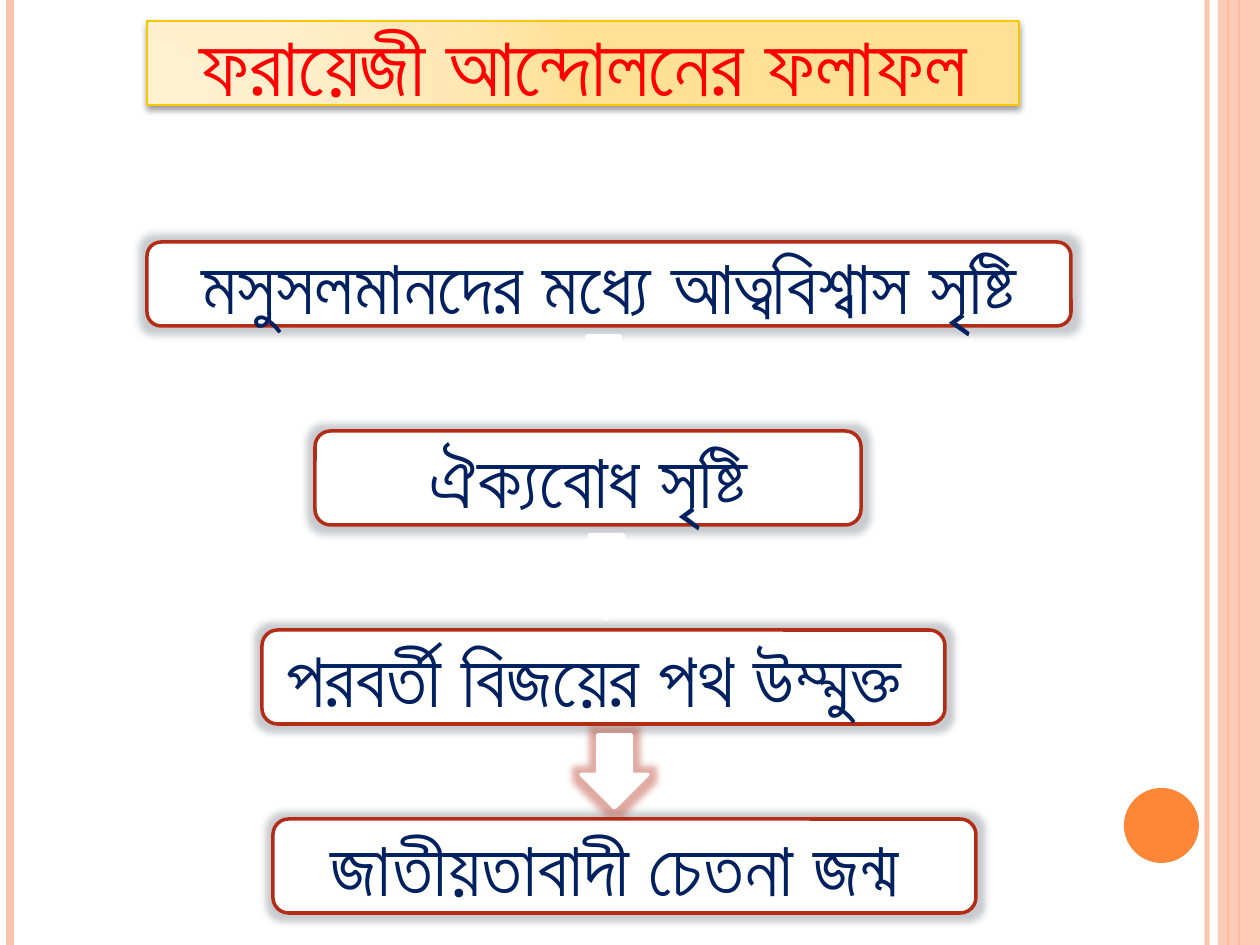
from dataclasses import dataclass

from lxml.etree import SubElement
from pptx import Presentation
from pptx.dml.color import RGBColor
from pptx.enum.shapes import MSO_CONNECTOR, MSO_SHAPE
from pptx.enum.text import MSO_ANCHOR, MSO_AUTO_SIZE, PP_ALIGN
from pptx.oxml.ns import qn
from pptx.util import Emu, Pt

SCALE = 914400 / 126  # EMU in one px


@dataclass(frozen=True)
class Theme:
    font: str = "Lato"
    head: int = 48
    body: int = 44
    white: str = "FFFFFF"
    navy: str = "002060"
    red: str = "FF0000"
    rust: str = "B32C16"
    gray: str = "777C84"
    gold: str = "F8C700"
    peach: str = "FEC3AE"
    orange: str = "FE8637"
    black: str = "000000"
    stops: tuple = ((0, "FFF0D1"), (30, "FFEFCC"), (75, "FFE7B1"), (100, "FFE193"))


T = Theme()

# Content: text and box (left, top, width, height)
TITLE = ("ফরায়েজী আন্দোলনের ফলাফল", (147, 21, 872, 84))
STEPS = [
    ("মসুসলমানদের মধ্যে আত্ববিশ্বাস সৃষ্টি", (147, 242, 924, 84)),
    ("ঐক্যবোধ সৃষ্টি", (315, 431, 546, 94)),
    ("পরবর্তী বিজয়ের পথ উম্মুক্ত ", (262, 630, 683, 94)),
    ("জাতীয়তাবাদী চেতনা জন্ম ", (273, 819, 703, 94)),
]
ARROWS = [(570, 126, 60, 93), (570, 336, 67, 73), (573, 535, 67, 84), (581, 735, 67, 73)]
# Stripes: x, colour, width in points, opacity
STRIPES = [(1207, T.peach, 3, 93), (10, T.peach, 4.5, 100),
           (1239, T.orange, 1.5, 100), (1228, T.orange, 0.75, 100)]


def px(n):
    return Emu(round(n * SCALE))


def apply(obj, vals):
    for name, val in vals.items():
        setattr(obj, name, val)


def node(base, tag, **attrs):
    return SubElement(base, qn(f"a:{tag}"), {k: str(v) for k, v in attrs.items()})


def tint(base, hue, alpha):
    node(node(base, "srgbClr", val=hue), "alpha", val=alpha * 1000)


def fade(fill, alpha):
    clr = fill._xPr.find(".//" + qn("a:srgbClr"))
    node(clr, "alpha", val=alpha * 1000)


def paint(item, hue):
    item.fill.solid()
    item.fill.fore_color.rgb = RGBColor.from_string(hue)


def edge(item, hue, width):
    paint(item.line, hue)
    item.line.width = Pt(width)


def glow(item, hue):
    item.shadow.inherit = False
    fx = item._element.spPr.find(qn("a:effectLst"))
    tint(node(fx, "glow", rad=Pt(8)), hue, 40)


def write(item, text, size, hue):
    frame = item.text_frame
    apply(frame, {"word_wrap": True, "auto_size": MSO_AUTO_SIZE.NONE,
                  "vertical_anchor": MSO_ANCHOR.MIDDLE})
    para = frame.paragraphs[0]
    para.alignment = PP_ALIGN.CENTER
    run = para.add_run()
    run.text = text
    apply(run.font, {"name": T.font, "size": Pt(size), "bold": False})
    run.font.color.rgb = RGBColor.from_string(hue)
    node(run._r.get_or_add_rPr(), "cs", typeface=T.font)


def shape(slide, kind, box, hue):
    item = slide.shapes.add_shape(kind, *map(px, box))
    item.shadow.inherit = False
    paint(item, hue)
    item.line.fill.background()
    return item


def stripe(slide, x, hue, width, alpha):
    item = slide.shapes.add_connector(
        MSO_CONNECTOR.STRAIGHT, px(x), 0, px(x), px(945))
    edge(item, hue, width)
    if alpha < 100:
        fade(item.line.fill, alpha)
    node(item._element.spPr, "effectLst")


def frame(slide):
    for spec_row in STRIPES:
        stripe(slide, *spec_row)
    band = shape(slide, MSO_SHAPE.RECTANGLE, (1218, 0, 42, 945), T.peach)
    fade(band.fill, 87)
    shape(slide, MSO_SHAPE.OVAL, (1124, 788, 75, 75), T.orange)


def title(slide, text, box):
    item = slide.shapes.title
    apply(item, dict(zip(("left", "top", "width", "height"), map(px, box))))
    props = item._element.spPr
    node(node(props, "prstGeom", prst="roundRect"), "avLst")
    # Radial gradient
    grad = node(props, "gradFill", rotWithShape=1)
    stops = node(grad, "gsLst")
    for pos, hue in T.stops:
        node(node(stops, "gs", pos=pos * 1000), "srgbClr", val=hue)
    focus = node(grad, "path", path="circle")
    node(focus, "fillToRect", l=5000, t=100000, r=120000, b=10000)
    edge(item, T.gold, 1)
    # Soft shadow below
    item.shadow.inherit = False
    drop = node(props.find(qn("a:effectLst")), "outerShdw",
                blurRad=Pt(4), dist=Pt(2), dir=5400000, rotWithShape=0)
    tint(drop, T.black, 40)
    write(item, text, T.head, T.red)


def step(slide, text, box):
    item = shape(slide, MSO_SHAPE.ROUNDED_RECTANGLE, box, T.white)
    edge(item, T.rust, 2)
    glow(item, T.gray)
    write(item, text, T.body, T.navy)


def arrow(slide, box):
    item = shape(slide, MSO_SHAPE.DOWN_ARROW, box, T.white)
    edge(item, T.white, 2)
    return item


def main():
    deck = Presentation()
    apply(deck, {"slide_width": px(1260), "slide_height": px(945)})
    slide = deck.slides.add_slide(deck.slide_layouts[5])
    frame(slide)
    title(slide, *TITLE)
    for text, box in STEPS:
        step(slide, text, box)
    arrows = [arrow(slide, box) for box in ARROWS]
    glow(arrows[-1], T.rust)
    deck.save("out.pptx")


if __name__ == "__main__":
    main()
